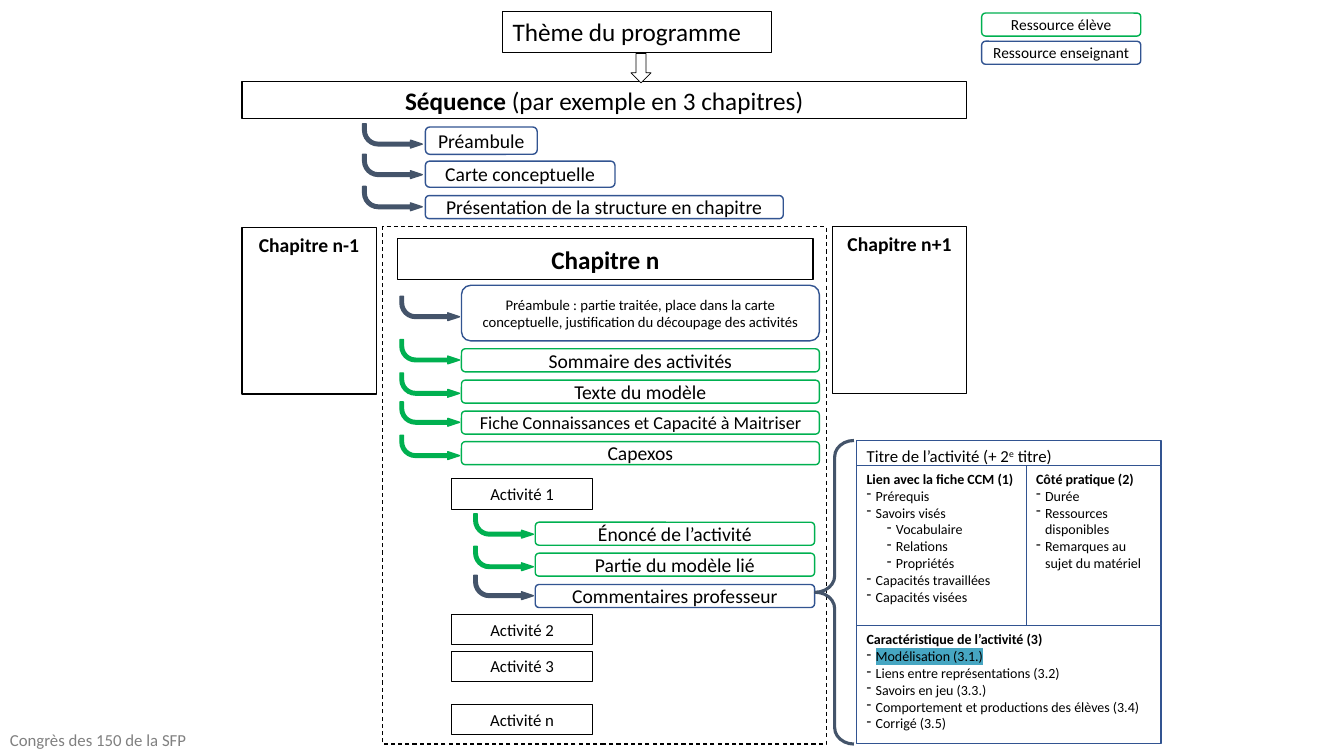
from dataclasses import dataclass
from typing import Any

from lxml import etree
from pptx import Presentation
from pptx.dml.color import RGBColor
from pptx.enum.dml import MSO_LINE
from pptx.enum.shapes import MSO_SHAPE
from pptx.enum.text import MSO_ANCHOR, PP_ALIGN
from pptx.oxml.ns import qn
from pptx.util import Cm, Pt

RECTANGLE = MSO_SHAPE.RECTANGLE
ROUNDED = MSO_SHAPE.ROUNDED_RECTANGLE
BENT_ARROW = MSO_SHAPE.BENT_ARROW
DOWN_ARROW = MSO_SHAPE.DOWN_ARROW
LEFT_BRACE = MSO_SHAPE.LEFT_BRACE
DASH = MSO_LINE.DASH
TOP, MIDDLE = MSO_ANCHOR.TOP, MSO_ANCHOR.MIDDLE
LEFT, CENTER = PP_ALIGN.LEFT, PP_ALIGN.CENTER

BLACK = RGBColor(0x00, 0x00, 0x00)
WHITE = RGBColor(0xFF, 0xFF, 0xFF)
GRAY = RGBColor(0x80, 0x80, 0x80)
SLATE = RGBColor(0x44, 0x54, 0x6A)
BLUE = RGBColor(0x32, 0x54, 0x91)
GREEN = RGBColor(0x00, 0xB0, 0x50)
TEAL = RGBColor(0x46, 0xA6, 0xC2)

FONT = "Calibri"
ARROW_WIDTH, ARROW_HEIGHT = 1.5, 0.61
ARROW_ADJUSTMENTS = (0.147, 0.16, 0.482, 0.644)
ROW_HEIGHT = 0.58
BULLET_INDENTS = (0.23, 0.74)


@dataclass
class Run:
    text: str
    bold: bool = False
    superscript: bool = False
    highlight: RGBColor | None = None


@dataclass
class Box:
    left: float
    top: float
    width: float
    height: float
    runs: tuple[Run, ...]
    size: float
    anchor: Any = MIDDLE
    align: Any = CENTER


@dataclass
class Resource:
    arrow_top: float
    top: float
    text: str
    color: RGBColor
    size: float = 14
    width: float | None = None
    height: float = ROW_HEIGHT


@dataclass
class ResourceGroup:
    arrow_left: float
    left: float
    width: float
    resources: tuple[Resource, ...]


@dataclass
class Panel:
    left: float
    top: float
    width: float
    height: float
    title: str
    items: tuple[tuple[int, Run], ...]


HEADINGS = (
    Box(12.67, 0.28, 6.78, 1.04, (Run("Thème du programme"),), 18, align=LEFT),
    Box(6.1, 2.06, 18.26, 0.94,
        (Run("Séquence ", True), Run("(par exemple en 3 chapitres)")), 18),
    Box(6.1, 5.74, 3.38, 4.19, (Run("Chapitre n-1", True),), 14, TOP),
    Box(20.98, 5.72, 3.38, 4.19, (Run("Chapitre n+1", True),), 14, TOP),
    Box(10.03, 6.02, 10.46, 1.02, (Run("Chapitre n", True),), 18),
)

ACTIVITIES = (("1", 12.07), ("2", 15.49), ("3", 16.41), ("n", 17.75))

GROUPS = (
    ResourceGroup(9.14, 10.72, 9.02, (
        Resource(3.12, 3.2, "Préambule", BLUE, width=2.82, height=0.69),
        Resource(3.89, 4.06, "Carte conceptuelle", BLUE, width=4.78, height=0.66),
        Resource(4.7, 4.93, "Présentation de la structure en chapitre", BLUE),
    )),
    ResourceGroup(10.08, 11.63, 9.02, (
        Resource(7.47, 7.19, "Préambule : partie traitée, place dans la carte "
                 "conceptuelle, justification du découpage des activités",
                 BLUE, size=10.5, height=1.4),
        Resource(8.56, 8.79, "Sommaire des activités", GREEN),
        Resource(9.4, 9.58, "Texte du modèle", GREEN),
        Resource(10.13, 10.36, "Fiche Connaissances et Capacité à Maitriser", GREEN, size=13),
        Resource(10.97, 11.13, "Capexos", GREEN),
    )),
    ResourceGroup(11.94, 13.49, 7.04, (
        Resource(12.95, 13.16, "Énoncé de l’activité", GREEN),
        Resource(13.77, 13.94, "Partie du modèle lié", GREEN),
        Resource(14.5, 14.73, "Commentaires professeur", BLUE),
    )),
)

LEGEND = (("Ressource élève", 0.33, GREEN), ("Ressource enseignant", 1.04, BLUE))

PANELS = (
    Panel(21.59, 15.77, 7.67, 2.97, "Caractéristique de l’activité (3)", (
        (0, Run("Modélisation (3.1.)", highlight=TEAL)),
        (0, Run("Liens entre représentations (3.2)")),
        (0, Run("Savoirs en jeu (3.3.)")),
        (0, Run("Comportement et productions des élèves (3.4)")),
        (0, Run("Corrigé (3.5)")),
    )),
    Panel(21.59, 11.73, 4.27, 4.04, "Lien avec la fiche CCM (1)", (
        (0, Run("Prérequis")),
        (0, Run("Savoirs visés")),
        (1, Run("Vocabulaire")),
        (1, Run("Relations")),
        (1, Run("Propriétés")),
        (0, Run("Capacités travaillées")),
        (0, Run("Capacités visées")),
    )),
    Panel(25.86, 11.73, 3.4, 4.04, "Côté pratique (2)", (
        (0, Run("Durée")),
        (0, Run("Ressources disponibles")),
        (0, Run("Remarques au sujet du matériel")),
    )),
)


def apply_formats(target: Any, formats: dict[str, Any]) -> None:
    for name, value in formats.items():
        setattr(target, name, value)


def write_runs(paragraph: Any, runs: tuple[Run, ...], size: float,
               color: RGBColor = BLACK, align: Any = LEFT) -> None:
    paragraph.alignment = align
    for item in runs:
        run = paragraph.add_run()
        run.text = item.text
        run.font.color.rgb = color
        apply_formats(run.font, {"name": FONT, "size": Pt(size), "bold": item.bold})
        properties = run.font._element
        if item.superscript:
            properties.set("baseline", "30000")
        if item.highlight is not None:
            highlight = etree.Element(qn("a:highlight"))
            etree.SubElement(highlight, qn("a:srgbClr"), val=str(item.highlight))
            properties.find(qn("a:solidFill")).addnext(highlight)


def draw_shape(slide: Any, kind: Any, left: float, top: float, width: float, height: float,
               line: RGBColor, weight: float, fill: RGBColor | None = None) -> Any:
    shape = slide.shapes.add_shape(kind, Cm(left), Cm(top), Cm(width), Cm(height))
    shape.shadow.inherit = False
    if fill is None:
        shape.fill.background()
    else:
        shape.fill.solid()
        shape.fill.fore_color.rgb = fill
    shape.line.color.rgb = line
    shape.line.width = Pt(weight)
    return shape


def draw_box(slide: Any, box: Box, kind: Any = RECTANGLE,
             line: RGBColor = BLACK, weight: float = 0.75) -> None:
    shape = draw_shape(slide, kind, box.left, box.top, box.width, box.height, line, weight)
    apply_formats(shape.text_frame, {"word_wrap": True, "vertical_anchor": box.anchor})
    write_runs(shape.text_frame.paragraphs[0], box.runs, box.size, align=box.align)


def draw_group(slide: Any, group: ResourceGroup) -> None:
    for resource in group.resources:
        color = GREEN if resource.color == GREEN else SLATE
        arrow = draw_shape(slide, BENT_ARROW, group.arrow_left, resource.arrow_top,
                           ARROW_WIDTH, ARROW_HEIGHT, color, 1, color)
        arrow._element.spPr.xfrm.set("flipV", "1")
        for index, value in enumerate(ARROW_ADJUSTMENTS):
            arrow.adjustments[index] = value
        draw_box(slide, Box(group.left, resource.top, resource.width or group.width,
                            resource.height, (Run(resource.text),), resource.size),
                 ROUNDED, resource.color, 1)


def draw_panel(slide: Any, panel: Panel) -> None:
    shape = draw_shape(slide, RECTANGLE, panel.left, panel.top, panel.width, panel.height,
                       BLUE, 0.75)
    frame = shape.text_frame
    apply_formats(frame, {"word_wrap": True, "vertical_anchor": TOP})
    write_runs(frame.paragraphs[0], (Run(panel.title, True),), 10)
    for level, run in panel.items:
        paragraph = frame.add_paragraph()
        paragraph.level = level
        write_runs(paragraph, (run,), 10)
        properties = paragraph._p.get_or_add_pPr()
        properties.set("marL", str(Cm(BULLET_INDENTS[level])))
        properties.set("indent", str(-Cm(BULLET_INDENTS[0])))
        etree.SubElement(properties, qn("a:buChar"), char="-")


def main() -> None:
    presentation = Presentation()
    apply_formats(presentation, {"slide_width": Cm(33.87), "slide_height": Cm(19.05)})
    slide = presentation.slides.add_slide(presentation.slide_layouts[6])

    footer = slide.shapes.add_textbox(Cm(0), Cm(18.11), Cm(7.62), Cm(1.09)).text_frame
    apply_formats(footer, {"word_wrap": True, "vertical_anchor": MIDDLE})
    write_runs(footer.paragraphs[0], (Run("Congrès des 150 de la SFP"),), 12, GRAY)

    for heading in HEADINGS:
        draw_box(slide, heading)
    frame = draw_shape(slide, RECTANGLE, 9.63, 5.72, 11.2, 13.03, BLACK, 0.75)
    frame.line.dash_style = DASH
    draw_shape(slide, DOWN_ARROW, 15.9, 1.35, 0.51, 0.74, BLACK, 0.5, WHITE)

    for label, top in ACTIVITIES:
        draw_box(slide, Box(11.38, top, 3.56, 0.76, (Run(f"Activité {label}"),), 12, TOP))
    for group in GROUPS:
        draw_group(slide, group)

    brace = draw_shape(slide, LEFT_BRACE, 20.55, 11.1, 0.97, 7.65, SLATE, 2.25)
    brace.adjustments[0] = 0.426
    title = (Run("Titre de l’activité (+ 2"), Run("e", superscript=True), Run(" titre)"))
    draw_box(slide, Box(21.59, 11.1, 7.67, 0.64, title, 12, TOP, LEFT), line=BLUE)
    for panel in PANELS:
        draw_panel(slide, panel)
    for text, top, color in LEGEND:
        draw_box(slide, Box(24.74, top, 4.01, ROW_HEIGHT, (Run(text),), 11), ROUNDED, color, 1)

    presentation.save("out.pptx")


if __name__ == "__main__":
    main()
